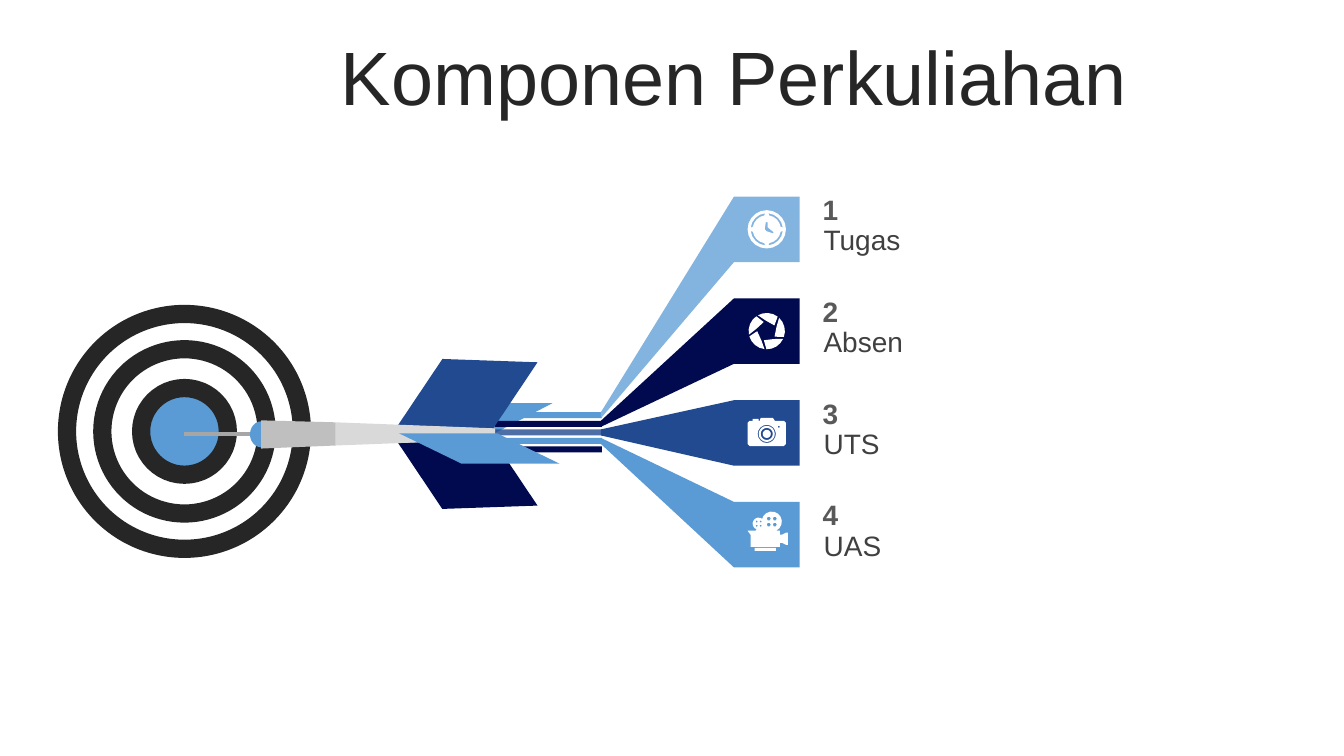
from math import cos, radians, sin

from lxml import etree
from pptx import Presentation
from pptx.dml.color import RGBColor
from pptx.enum.shapes import MSO_SHAPE
from pptx.enum.text import MSO_ANCHOR, MSO_AUTO_SIZE, PP_ALIGN
from pptx.oxml.ns import qn
from pptx.util import Cm, Pt

RECT, OVAL = MSO_SHAPE.RECTANGLE, MSO_SHAPE.OVAL
FIN, CHORD = MSO_SHAPE.PARALLELOGRAM, MSO_SHAPE.CHORD
CENTER, MIDDLE = PP_ALIGN.CENTER, MSO_ANCHOR.MIDDLE
GROW = MSO_AUTO_SIZE.SHAPE_TO_FIT_TEXT

COLORS = {
    "white": "FFFFFF", "black": "262626", "text": "404040", "gray": "595959",
    "sky": "83B4E0", "blue": "5A9BD5", "royal": "224A90", "navy": "010A4F",
    "pin": "A6A6A6", "grip": "BFBFBF", "shaft": "D9D9D9",
}


def unit(value):
    """Turn a layout unit (one inch) into a length."""
    return Cm(value * 2.54)


def arc(x, y, r, start=0, end=360, steps=4):
    """Points along an arc, clockwise from the right."""
    turns = [radians(start + (end - start) * i / steps) for i in range(steps + 1)]
    return [(x + r * cos(t), y + r * sin(t)) for t in turns]


def ring(x, y, r, steps=16):
    """Points around a full circle."""
    return arc(x, y, r, steps=steps)[:-1]


def box(left, top, right, bottom):
    return [(left, top), (right, top), (right, bottom), (left, bottom)]


class Deck:
    font = "Arial"

    def __init__(self):
        self.file = Presentation()
        self.file.slide_width, self.file.slide_height = unit(13.33), unit(7.5)
        self.slide = self.file.slides.add_slide(self.file.slide_layouts[6])

    def color(self, name):
        return RGBColor.from_string(COLORS[name])

    def paint(self, shape, fill, line=None, width=0):
        shape.shadow.inherit = False
        shape.fill.solid()
        shape.fill.fore_color.rgb = self.color(fill)
        if line:
            shape.line.color.rgb = self.color(line)
            shape.line.width = Pt(width)
        else:
            shape.line.fill.background()

    def shape(self, kind, place, fill, line=None, width=0, adjust=(), turn=0,
              flip=False, alpha=100):
        item = self.slide.shapes.add_shape(kind, *map(unit, place))
        self.paint(item, fill, line, width)
        for i, value in enumerate(adjust):
            item.adjustments[i] = value
        item.rotation = turn
        if flip:
            item.element.spPr.find(qn("a:xfrm")).set("flipH", "1")
        if alpha < 100:
            tint = item.element.spPr.find(".//" + qn("a:srgbClr"))
            etree.SubElement(tint, qn("a:alpha")).set("val", str(alpha * 1000))

    def free(self, fill, *loops):
        """Draw closed loops as one shape; inner loops cut holes."""
        loops = [[(unit(x), unit(y)) for x, y in loop] for loop in loops]
        pen = self.slide.shapes.build_freeform(*loops[0][0], scale=1.0)
        for i, loop in enumerate(loops):
            if i:
                pen.move_to(*loop[0])
            pen.add_line_segments(loop[1:], close=True)
        item = pen.convert_to_shape()
        self.paint(item, fill)

    def text(self, words, place, size, color, bold=False, title=False):
        frame = self.slide.shapes.add_textbox(*map(unit, place)).text_frame
        frame.word_wrap = True
        line = frame.paragraphs[0]
        line.text = words
        line.font.name, line.font.size = self.font, Pt(size)
        line.font.bold, line.font.color.rgb = bold, self.color(color)
        if title:
            frame.vertical_anchor, line.alignment = MIDDLE, CENTER
            line.line_spacing, line.space_before = 0.9, Pt(10)
        else:
            frame.auto_size = GROW


def clock(x, y):
    loops = [ring(x, y, 0.19, 20)]
    for start in range(0, 360, 90):
        loops.append(arc(x, y, 0.16, start + 6, start + 84)
                     + arc(x, y, 0.14, start + 80, start + 10))
    hands = [(x - 0.01, y - 0.07), (x + 0.01, y - 0.07), (x + 0.01, y - 0.02),
             (x + 0.07, y + 0.03), (x + 0.06, y + 0.04), (x, y + 0.02),
             (x - 0.02, y)]
    return loops + [hands]


def lens(x, y):
    blade = [(0.07, 0.08), *arc(0, 0, 0.18, 26, 92), (-0.03, 0.09)]
    loops = []
    for turn in range(0, 360, 72):
        c, s = cos(radians(turn - 1)), sin(radians(turn - 1))
        loops.append([(x + a * c - b * s, y + a * s + b * c) for a, b in blade])
    return loops


def camera(x, y):
    body = [(-0.06, -0.15), (0.06, -0.15), (0.08, -0.12), (0.17, -0.12),
            (0.19, -0.1), (0.19, 0.11), (0.17, 0.13), (-0.17, 0.13),
            (-0.19, 0.11), (-0.19, -0.1), (-0.17, -0.12), (-0.14, -0.12),
            (-0.14, -0.14), (-0.08, -0.14), (-0.08, -0.12), (-0.07, -0.12)]
    rings = [ring(x, y + 0.01, r) for r in (0.09, 0.08, 0.06, 0.04)]
    return [[(x + a, y + b) for a, b in body], *rings,
            ring(x + 0.12, y - 0.06, 0.01, 6)]


def movie(x, y):
    big, small = (x + 0.05, y - 0.13), (x - 0.08, y - 0.11)
    body = [(0.13, -0.04), (0.13, 0), (0.15, 0), (0.19, -0.02), (0.19, 0.1),
            (0.15, 0.08), (0.13, 0.08), (0.13, 0.12), (-0.16, 0.12),
            (-0.16, 0), (-0.19, -0.04), (-0.11, -0.04)]
    loops = [[(x + a, y + b) for a, b in body]
             + arc(*small, 0.06, 110, 310, 8) + arc(*big, 0.1, 190, 425, 10)]
    for (cx, cy), gap, r in ((big, 0.03, 0.02), (small, 0.02, 0.01)):
        loops += [ring(cx + i * gap, cy + j * gap, r, 6)
                  for i in (-1, 1) for j in (-1, 1)]
    return loops + [box(x - 0.12, y + 0.13, x + 0.09, y + 0.16),
                    box(x + 0.19, y - 0.02, x + 0.21, y + 0.1)]


ITEMS = [("Tugas", "sky", clock), ("Absen", "navy", lens),
         ("UTS", "royal", camera), ("UAS", "blue", movie)]
STRIPES = [("blue", 100), ("navy", 100), ("royal", 80), ("blue", 100),
           ("navy", 100)]
FLAG, SIDE, THICK = 7.28, 0.65, 0.06
TAIL = 5.96


def stripe(i):
    """Top of a stripe at the tail of the dart."""
    return 4.09 + 0.34 * i / 4


def main():
    deck = Deck()
    deck.text("Komponen Perkuliahan", (0.95, 0.41, 12.66, 0.79), 54, "black",
              title=True)

    for size, fill in ((2.33, "white"), (1.63, "white"), (0.86, "blue")):
        place = (1.83 - size / 2, 4.28 - size / 2, size, size)
        deck.shape(OVAL, place, fill, "black", 13)

    deck.shape(FIN, (3.95, 4, 1.53, 0.3), "blue", adjust=[1.92])
    for i, (fill, alpha) in enumerate(STRIPES):
        deck.shape(RECT, (4.91, stripe(i), 1.06, THICK), fill, alpha=alpha)

    deck.free("pin", box(1.83, 4.29, 2.63, 4.33))
    deck.shape(FIN, (3.96, 4.37, 1.36, 0.67), "navy", adjust=[0.62], turn=178,
               flip=True)
    deck.shape(FIN, (3.96, 3.57, 1.36, 0.67), "royal", adjust=[0.62], turn=182)
    deck.free("shaft", [(3.33, 4.19), (4.91, 4.25), (4.91, 4.36), (3.33, 4.42)])
    deck.shape(CHORD, (2.48, 4.18, 0.23, 0.26), "blue", adjust=[53.91, 162])
    deck.free("grip", [(2.59, 4.17), (3.33, 4.19), (3.33, 4.42), (2.59, 4.45)])
    deck.shape(FIN, (3.96, 4.3, 1.59, 0.3), "blue", adjust=[2.06], flip=True)

    for i, (label, fill, icon) in enumerate(ITEMS):
        top, start = 1.95 + 1.01 * i, stripe(i)
        deck.shape(RECT, (FLAG, top, SIDE, SIDE), fill)
        deck.free(fill, [(TAIL, start), (FLAG, top), (FLAG, top + SIDE),
                         (TAIL, start + THICK)])
        deck.free("white", *icon(FLAG + SIDE / 2, top + SIDE / 2))
        deck.text(label, (8.07, top + 0.21, 4.44, 0.44), 20, "text")
        deck.text(str(i + 1), (8.06, top - 0.09, 4.4, 0.44), 20, "gray",
                  bold=True)

    deck.file.save("out.pptx")


if __name__ == "__main__":
    main()
